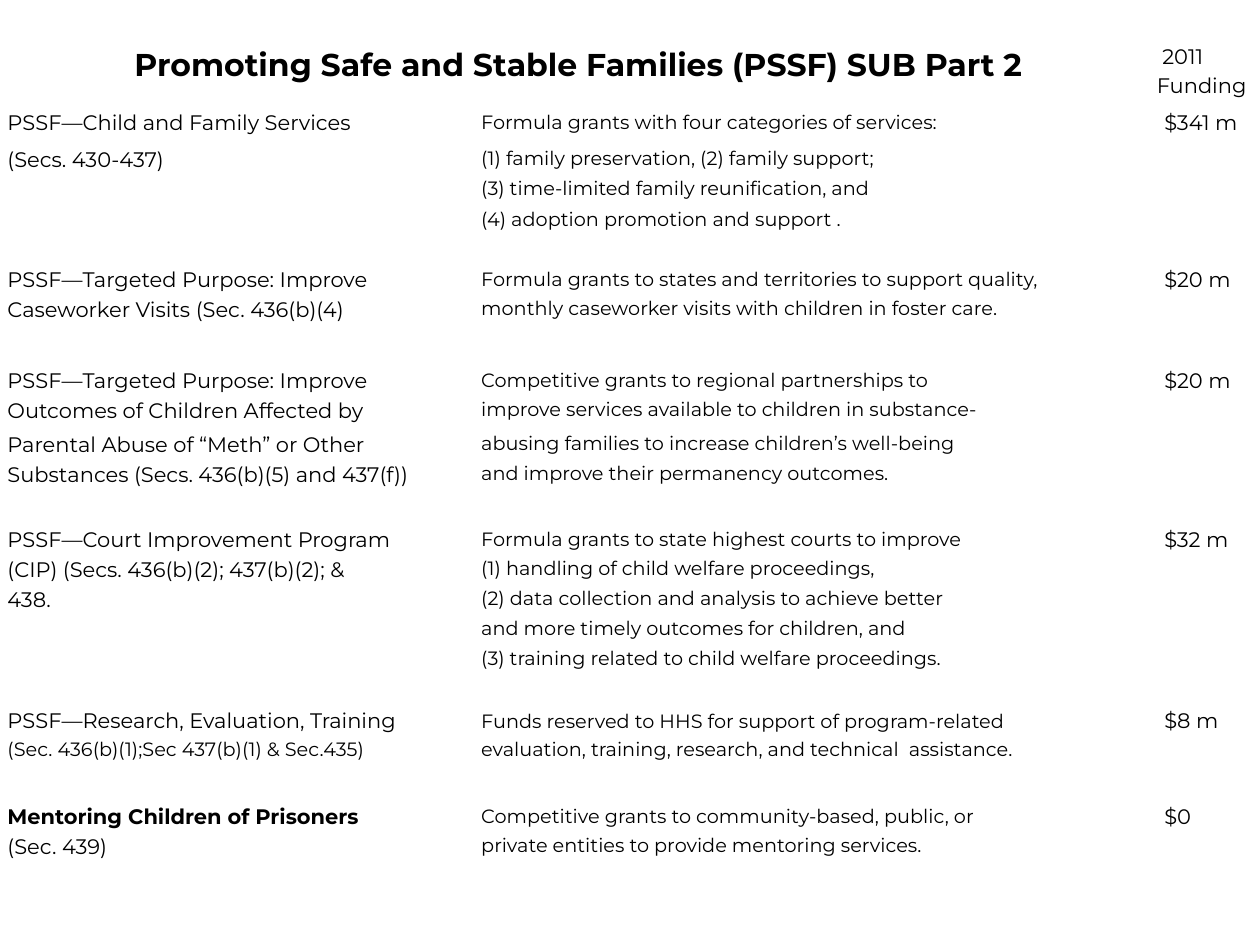
from itertools import zip_longest

from lxml.etree import SubElement
from pptx import Presentation
from pptx.dml.color import RGBColor
from pptx.enum.text import MSO_ANCHOR, PP_ALIGN
from pptx.oxml.ns import qn
from pptx.util import Cm, Pt

COLORS = {"text": "000000"}
FONT = "Montserrat"

TITLE = "Promoting Safe and Stable Families (PSSF) SUB Part 2"
FUNDING_HEADER = " 2011 Funding"

# Program lines, description lines, funding
PROGRAMS = [
    (["PSSF—Child and Family Services", "(Secs. 430-437)"],
     ["Formula grants with four categories of services:",
      "(1) family preservation, (2) family support;",
      "(3) time-limited family reunification, and",
      "(4) adoption promotion and support ."],
     "$341 m"),
    (["PSSF—Targeted Purpose: Improve", "Caseworker Visits (Sec. 436(b)(4)"],
     ["Formula grants to states and territories to support quality,",
      "monthly caseworker visits with children in foster care."],
     "$20 m"),
    (["PSSF—Targeted Purpose: Improve", "Outcomes of Children Affected by",
      "Parental Abuse of “Meth” or Other",
      "Substances (Secs. 436(b)(5) and 437(f))"],
     ["Competitive grants to regional partnerships to",
      "improve services available to children in substance-",
      "abusing families to increase children’s well-being",
      "and improve their permanency outcomes."],
     "$20 m"),
    (["PSSF—Court Improvement Program",
      "(CIP) (Secs. 436(b)(2); 437(b)(2); &", "438."],
     ["Formula grants to state highest courts to improve",
      "(1) handling of child welfare proceedings,",
      "(2) data collection and analysis to achieve better",
      "and more timely outcomes for children, and",
      "(3) training related to child welfare proceedings."],
     "$32 m"),
    (["PSSF—Research, Evaluation, Training",
      "(Sec. 436(b)(1);Sec 437(b)(1) & Sec.435)"],
     ["Funds reserved to HHS for support of program-related",
      "evaluation, training, research, and technical  assistance."],
     "$8 m"),
    (["Mentoring Children of Prisoners", "(Sec. 439)"],
     ["Competitive grants to community-based, public, or",
      "private entities to provide mentoring services."],
     "$0"),
]
SMALL_PROGRAM_LINE = "(Sec. 436(b)(1);Sec 437(b)(1) & Sec.435)"
BOLD_PROGRAM_LINE = "Mentoring Children of Prisoners"

COLUMN_WIDTHS = [9.55, 13.77, 2.08]
COLUMN_SIZES = [12, 11, 12]
ROW_HEIGHT = 0.61
SPECIAL_HEIGHTS = {0: 0.66, 1: 0.89, 5: 0.58, 7: 0.81, 10: 0.69,
                   12: 0.69, 21: 0.81, 22: 0.51}


class SlideBuilder:
    def __init__(self, slide):
        self.slide = slide

    def table(self, left, top, widths, heights):
        grid = self.slide.shapes.add_table(
            len(heights), len(widths), Cm(left), Cm(top),
            Cm(sum(widths)), Cm(sum(heights))).table
        grid.first_row = False
        grid.horz_banding = False
        for column, width in zip(grid.columns, widths):
            column.width = Cm(width)
        for row, height in zip(grid.rows, heights):
            row.height = Cm(height)
        return grid

    def cell(self, cell, text, size, bold=False, middle=False, margin=0.15):
        cell.fill.background()
        cell.margin_left = cell.margin_right = Cm(margin)
        cell.margin_top = cell.margin_bottom = 0
        cell.vertical_anchor = MSO_ANCHOR.MIDDLE if middle else MSO_ANCHOR.TOP
        paragraph = cell.text_frame.paragraphs[0]
        paragraph.line_spacing = 1.15
        if text:
            paragraph.text = text
        else:
            # Keeps an empty cell from stretching its row
            SubElement(paragraph._p, qn("a:endParaRPr"), sz=str(size * 100))
        font = paragraph.font
        font.name = FONT
        font.size = Pt(size)
        font.bold = bold
        font.color.rgb = RGBColor.from_string(COLORS["text"])
        return paragraph


def program_rows():
    """Return (texts, starts_program) rows, with an empty row between programs."""
    rows = []
    for names, descriptions, funding in PROGRAMS:
        if rows:
            rows.append((("", "", ""), False))
        lines = zip_longest(names, descriptions, [funding], fillvalue="")
        rows += [(texts, index == 0) for index, texts in enumerate(lines)]
    return rows


def main():
    presentation = Presentation()
    presentation.slide_width = Cm(25.4)
    presentation.slide_height = Cm(19.05)
    builder = SlideBuilder(
        presentation.slides.add_slide(presentation.slide_layouts[6]))

    rows = program_rows()
    heights = [SPECIAL_HEIGHTS.get(i, ROW_HEIGHT) for i in range(len(rows) + 1)]
    funding_table = builder.table(0, 0.81, COLUMN_WIDTHS, heights)

    # Heading row
    title_cell = funding_table.cell(0, 0)
    title_cell.merge(funding_table.cell(0, 1))
    title = builder.cell(title_cell, TITLE, 18, bold=True)
    title.alignment = PP_ALIGN.CENTER
    builder.cell(funding_table.cell(0, 1), "", 11)
    header = builder.cell(funding_table.cell(0, 2), FUNDING_HEADER, 12,
                          middle=True, margin=0)
    header.space_after = Pt(10)

    # Program rows
    for row_index, (texts, starts_program) in enumerate(rows, start=1):
        for column_index, text in enumerate(texts):
            size = COLUMN_SIZES[column_index]
            if not text or text == SMALL_PROGRAM_LINE:
                size = 11
            builder.cell(funding_table.cell(row_index, column_index), text, size,
                         bold=text == BOLD_PROGRAM_LINE, middle=starts_program)

    presentation.save("out.pptx")


if __name__ == "__main__":
    main()
